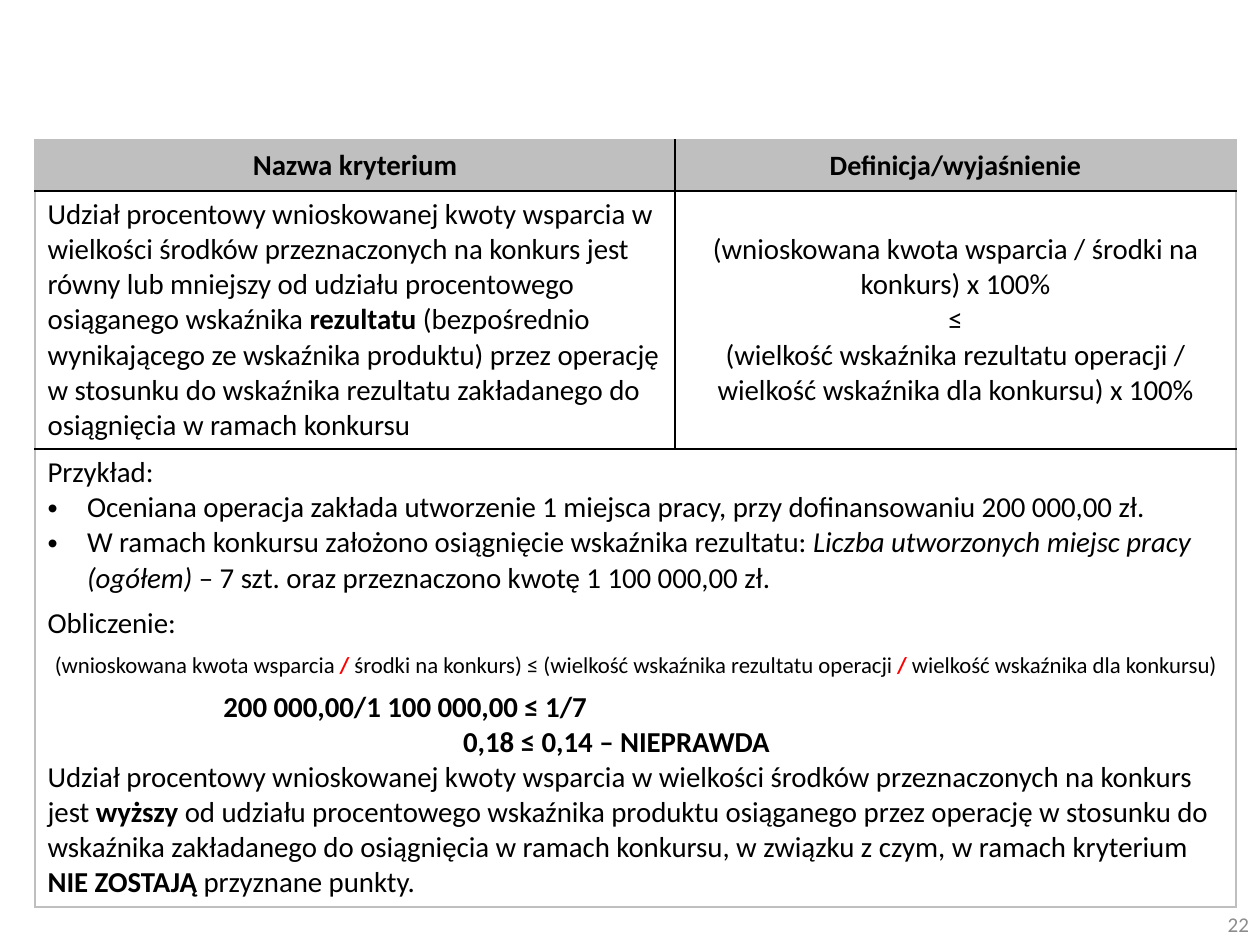
"""Builds the slide with the criterion table and its worked example."""
from dataclasses import dataclass

from lxml import etree
from pptx import Presentation
from pptx.dml.color import RGBColor
from pptx.enum import text
from pptx.oxml.ns import qn
from pptx.util import Pt

COLORS = {"ink": "000000", "header": "BFBFBF", "paper": "FFFFFF", "slash": "FF0000", "number": "8C8C8C"}
FONT = "Calibri"
BODY_SIZE = 16.5
CENTER = text.PP_ALIGN.CENTER
MIDDLE = text.MSO_ANCHOR.MIDDLE
TOP = text.MSO_ANCHOR.TOP


@dataclass(frozen=True)
class Span:
    words: str
    bold: bool = False
    italic: bool = False
    color: str = "ink"


@dataclass(frozen=True)
class Line:
    spans: tuple[Span, ...]
    size: float = BODY_SIZE
    align: text.PP_ALIGN = text.PP_ALIGN.LEFT
    before: float = 0
    indent: float = 0
    bullet: bool = False


def plain(words: str, **layout) -> Line:
    return Line((Span(words),), **layout)


def strong(words: str, **layout) -> Line:
    return Line((Span(words, bold=True),), **layout)


def rgb(name: str) -> RGBColor:
    return RGBColor.from_string(COLORS[name])


def format_font(font, span: Span) -> None:
    font.bold = span.bold
    font.italic = span.italic
    font.color.rgb = rgb(span.color)


def write(frame, lines: tuple[Line, ...]) -> None:
    for index, line in enumerate(lines):
        paragraph = frame.paragraphs[0] if index == 0 else frame.add_paragraph()
        paragraph.alignment = line.align
        paragraph.space_before = Pt(line.before)
        properties = paragraph._p.get_or_add_pPr()
        properties.set("marL", str(Pt(line.indent)))
        properties.set("indent", str(Pt(-line.indent if line.bullet else 0)))
        if line.bullet:
            etree.SubElement(properties, qn("a:buFont"), typeface="Arial")
            etree.SubElement(properties, qn("a:buChar"), char="•")
        paragraph.font.name = FONT
        paragraph.font.size = Pt(line.size)
        if len(line.spans) == 1:
            paragraph.text = line.spans[0].words
            format_font(paragraph.font, line.spans[0])
        else:
            for span in line.spans:
                run = paragraph.add_run()
                run.text = span.words
                format_font(run.font, span)


def set_borders(cell, **sides: str) -> None:
    properties = cell._tc.get_or_add_tcPr()
    for position, side in enumerate(("L", "R", "T", "B")):
        border = etree.Element(qn(f"a:ln{side}"), w=str(Pt(1)))
        fill = etree.SubElement(border, qn("a:solidFill"))
        etree.SubElement(fill, qn("a:srgbClr"), val=COLORS[sides.get(side, "header")])
        properties.insert(position, border)


def fill_cell(cell, lines: tuple[Line, ...], anchor: text.MSO_ANCHOR, fill: str = "paper") -> None:
    cell.fill.solid()
    cell.fill.fore_color.rgb = rgb(fill)
    cell.vertical_anchor = anchor
    write(cell.text_frame, lines)


CRITERION = Line((
    Span("Udział procentowy wnioskowanej kwoty wsparcia w wielkości środków przeznaczonych na konkurs "
         "jest równy lub mniejszy od udziału procentowego osiąganego wskaźnika "),
    Span("rezultatu", bold=True),
    Span(" (bezpośrednio wynikającego ze wskaźnika produktu) przez operację w stosunku do wskaźnika "
         "rezultatu zakładanego do osiągnięcia w ramach konkursu"),
))
DEFINITION = (
    plain("(wnioskowana kwota wsparcia / środki na konkurs) x 100%", align=CENTER),
    plain("≤\v(wielkość wskaźnika rezultatu operacji / wielkość wskaźnika dla konkursu) x 100%", align=CENTER),
)
SLASH = Span("/", bold=True, color="slash")
EXAMPLE = (
    plain("Przykład:"),
    plain("Oceniana operacja zakłada utworzenie 1 miejsca pracy, przy dofinansowaniu 200 000,00 zł.",
          indent=22.5, bullet=True),
    Line((
        Span("W ramach konkursu założono osiągnięcie wskaźnika rezultatu: "),
        Span("Liczba utworzonych miejsc pracy (ogółem)", italic=True),
        Span(" – 7 szt. oraz przeznaczono kwotę 1 100 000,00 zł."),
    ), indent=22.5, bullet=True),
    plain("Obliczenie:", before=6),
    Line((
        Span("(wnioskowana kwota wsparcia "),
        SLASH,
        Span(" środki na konkurs) ≤ (wielkość wskaźnika rezultatu operacji "),
        SLASH,
        Span(" wielkość wskaźnika dla konkursu)"),
    ), size=13, align=CENTER, before=6),
    strong("200 000,00/1 100 000,00 ≤ 1/7", before=6, indent=100.5),
    strong("0,18 ≤ 0,14 – NIEPRAWDA", indent=237.5),
    Line((
        Span("Udział procentowy wnioskowanej kwoty wsparcia w wielkości środków przeznaczonych na konkurs jest "),
        Span("wyższy", bold=True),
        Span(" od udziału procentowego wskaźnika produktu osiąganego przez operację w stosunku do wskaźnika "
             "zakładanego do osiągnięcia w ramach konkursu, w związku z czym, w ramach kryterium "),
        Span("NIE ZOSTAJĄ ", bold=True),
        Span("przyznane punkty."),
    )),
)


def add_criterion_table(slide) -> None:
    widths, heights = (365.75, 320.5), (29.25, 147.5, 261.5)
    table = slide.shapes.add_table(3, 2, Pt(20), Pt(80), Pt(sum(widths)), Pt(sum(heights))).table
    table.first_row = table.horz_banding = False
    for column, width in zip(table.columns, widths):
        column.width = Pt(width)
    for row, height in zip(table.rows, heights):
        row.height = Pt(height)
    table.cell(2, 0).merge(table.cell(2, 1))

    fill_cell(table.cell(0, 0), (strong("Nazwa kryterium", align=CENTER),), MIDDLE, "header")
    fill_cell(table.cell(0, 1), (strong("Definicja/wyjaśnienie", size=16, align=CENTER),), MIDDLE, "header")
    fill_cell(table.cell(1, 0), (CRITERION,), TOP)
    fill_cell(table.cell(1, 1), DEFINITION, MIDDLE)
    fill_cell(table.cell(2, 0), EXAMPLE, TOP)

    set_borders(table.cell(0, 0), R="ink", B="ink")
    set_borders(table.cell(0, 1), L="ink", B="ink")
    set_borders(table.cell(1, 0), R="ink", T="ink", B="ink")
    set_borders(table.cell(1, 1), L="ink", T="ink", B="ink")
    for column in range(2):
        set_borders(table.cell(2, column), T="ink")


def add_page_number(slide) -> None:
    frame = slide.shapes.add_textbox(Pt(553), Pt(513.5), Pt(167.75), Pt(28.75)).text_frame
    frame.word_wrap = True
    frame.vertical_anchor = MIDDLE
    write(frame, (Line((Span("22", color="number"),), size=12, align=text.PP_ALIGN.RIGHT),))


def main() -> None:
    deck = Presentation()
    deck.slide_width, deck.slide_height = Pt(720), Pt(540)
    slide = deck.slides.add_slide(deck.slide_layouts[6])
    add_page_number(slide)
    add_criterion_table(slide)
    deck.save("out.pptx")


if __name__ == "__main__":
    main()
